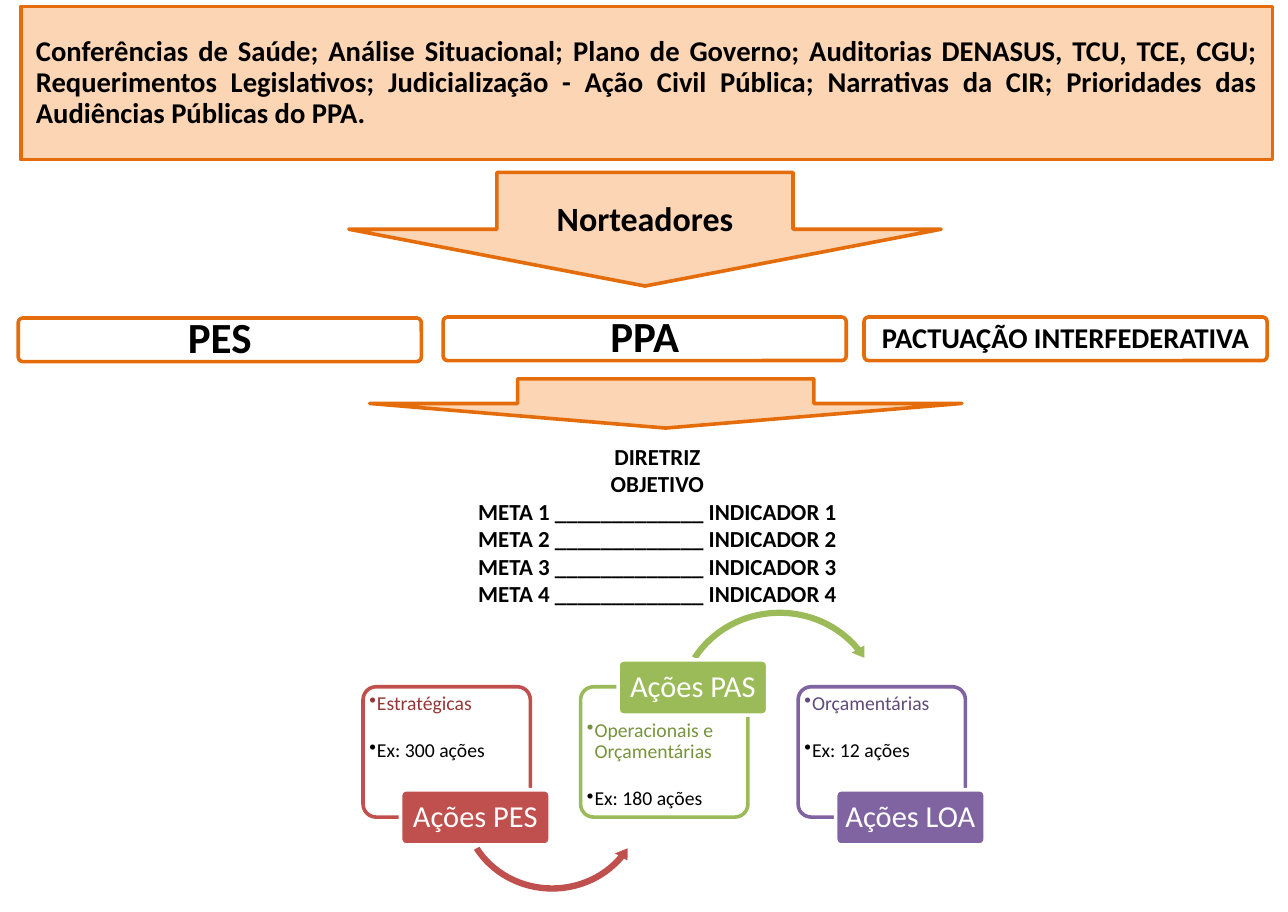
from dataclasses import dataclass

from lxml import etree
from pptx import Presentation
from pptx import util as u
from pptx.dml.color import RGBColor
from pptx.enum import shapes, text
from pptx.oxml import ns

KIND = shapes.MSO_SHAPE
ALIGN = text.PP_ALIGN
ANCHOR = text.MSO_ANCHOR


@dataclass(frozen=True)
class Theme:
    font: str = "Calibri"
    black: str = "000000"
    white: str = "FFFFFF"
    peach: str = "FCD5B5"
    orange: str = "E46C0A"
    line: float = 2
    heading: float = 16
    arrow: float = 19
    plan: float = 24
    goal: float = 12.8
    label: float = 17
    bullet: float = 11


THEME = Theme()

SOURCES = (
    "Conferências de Saúde; Análise Situacional; Plano de Governo; "
    "Auditorias DENASUS, TCU, TCE, CGU; Requerimentos Legislativos; "
    "Judicialização - Ação Civil Pública; Narrativas da CIR; "
    "Prioridades das Audiências Públicas do PPA."
)
PLANS = [
    ("PES", 0.36, 6.27, THEME.plan),
    ("PPA", 8.74, 6.25, THEME.plan),
    ("PACTUAÇÃO INTERFEDERATIVA", 17.04, 6.25, THEME.heading),
]
ACTIONS = [
    dict(name="Ações PES", kind="Estratégicas", example="Ex: 300 ações",
         color="C0504D", dark="953735", label_top=2.03, text_top=0.05,
         arrow=(KIND.LEFT_CIRCULAR_ARROW, (1.85, 0.56, 3.76, 3.56),
                (0.035, 4.292, 22.047, 90.245, 0.04))),
    dict(name="Ações PAS", kind="Operacionais e Orçamentárias", example="Ex: 180 ações",
         color="9BBB59", dark="77933C", label_top=-0.53, text_top=0.58,
         arrow=(KIND.CIRCULAR_ARROW, (1.83, -1.6, 4.19, 3.96),
                (0.031, 3.827, 194.418, 125.755, 0.036))),
    dict(name="Ações LOA", kind="Orçamentárias", example="Ex: 12 ações",
         color="8064A2", dark="604A7B", label_top=2.03, text_top=0.05, arrow=None),
]


def apply(target, values):
    for name, value in values.items():
        setattr(target, name, value)


def add_shape(slide, kind, box, fill, line=None, adjustments=(), opacity=None):
    shape = slide.shapes.add_shape(kind, *map(u.Cm, box))
    shape.shadow.inherit = False
    for index, value in enumerate(adjustments):
        shape.adjustments[index] = value
    shape.fill.solid()
    shape.fill.fore_color.rgb = RGBColor.from_string(fill)
    if opacity:
        color = shape.fill._xPr.find(".//" + ns.qn("a:srgbClr"))
        etree.SubElement(color, ns.qn("a:alpha"), val=str(opacity * 1000))
    if line:
        shape.line.color.rgb = RGBColor.from_string(line)
        shape.line.width = u.Pt(THEME.line)
    else:
        shape.line.fill.background()
    return shape


def write(shape, lines, size, colors=(THEME.black,), bold=True, insets=(0.25, 0.13, 0.25, 0.13),
          anchor=ANCHOR.MIDDLE, **paragraph_format):
    frame = shape.text_frame
    sides = ("margin_left", "margin_top", "margin_right", "margin_bottom")
    apply(frame, dict(zip(sides, map(u.Cm, insets)), word_wrap=True, vertical_anchor=anchor))
    for index, line in enumerate(lines):
        paragraph = frame.paragraphs[0] if index == 0 else frame.add_paragraph()
        apply(paragraph, {"alignment": ALIGN.CENTER, **paragraph_format})
        run = paragraph.add_run()
        run.text = line
        apply(run.font, dict(name=THEME.font, size=u.Pt(size), bold=bold))
        run.font.color.rgb = RGBColor.from_string(colors[index % len(colors)])
    return frame


def add_bullet(paragraph):
    properties = paragraph._p.get_or_add_pPr()
    hanging = u.Cm(0.15)
    properties.set("marL", str(hanging))
    properties.set("indent", str(-hanging))
    etree.SubElement(properties, ns.qn("a:buChar"), char="•")


def sources_panel(slide, box):
    shape = add_shape(slide, KIND.RECTANGLE, box, THEME.peach, THEME.orange)
    write(shape, [SOURCES], THEME.heading, insets=(0.3,) * 4,
          alignment=ALIGN.JUSTIFY, line_spacing=0.9)


def down_arrow(slide, box, caption=None):
    shape = add_shape(slide, KIND.DOWN_ARROW, box, THEME.peach, THEME.orange)
    if caption:
        write(shape, [caption], THEME.arrow, line_spacing=1.15, space_after=u.Pt(9.3))


def plan_box(slide, box, name, size):
    shape = add_shape(slide, KIND.ROUNDED_RECTANGLE, box, THEME.white, THEME.orange, (0.105,), 90)
    write(shape, [name], size, insets=(0.18, 0, 0.18, 0), line_spacing=0.9)


def goals_list(slide, box):
    goals = [f"META {n} _____________ INDICADOR {n}" for n in range(1, 5)]
    shape = slide.shapes.add_textbox(*map(u.Cm, box))
    write(shape, ["DIRETRIZ", "OBJETIVO", *goals], THEME.goal, anchor=ANCHOR.TOP)


def action_card(slide, box, action):
    left, top = box[:2]
    color = action["color"]
    card = add_shape(slide, KIND.ROUNDED_RECTANGLE, box, THEME.white, color, (0.1,), 90)
    frame = write(card, [action["kind"], action["example"]], THEME.bullet,
                  (action["dark"], THEME.black), False, (0.05, action["text_top"], 0.05, 0.05),
                  ANCHOR.TOP, alignment=ALIGN.LEFT, line_spacing=0.9, space_after=u.Pt(14.8))
    for paragraph in frame.paragraphs:
        add_bullet(paragraph)
    if action["arrow"]:
        kind, (dx, dy, width, height), adjustments = action["arrow"]
        add_shape(slide, kind, (left + dx, top + dy, width, height), color, None, adjustments)
    label = add_shape(slide, KIND.ROUNDED_RECTANGLE,
                      (left + 0.74, top + action["label_top"], 2.95, 1.09),
                      color, THEME.white, (0.1,))
    write(label, [action["name"]], THEME.label, (THEME.white,), False,
          (0.1, 0.05, 0.1, 0.05), line_spacing=0.9)


def main():
    presentation = Presentation()
    apply(presentation, dict(slide_width=u.Cm(25.4), slide_height=u.Cm(17.98)))
    slide = presentation.slides.add_slide(presentation.slide_layouts[6])
    sources_panel(slide, (0.41, 0.13, 24.69, 3.02))
    down_arrow(slide, (6.88, 3.4, 11.68, 2.24), "Norteadores")
    for name, left, top, size in PLANS:
        plan_box(slide, (left, top, 7.95, 0.86), name, size)
    goals_list(slide, (7.49, 8.59, 10.95, 3.58))
    for index, action in enumerate(ACTIONS):
        action_card(slide, (7.16 + 4.29 * index, 13.54, 3.3, 2.57), action)
    down_arrow(slide, (7.29, 7.47, 11.68, 0.97))
    presentation.save("out.pptx")


if __name__ == "__main__":
    main()
